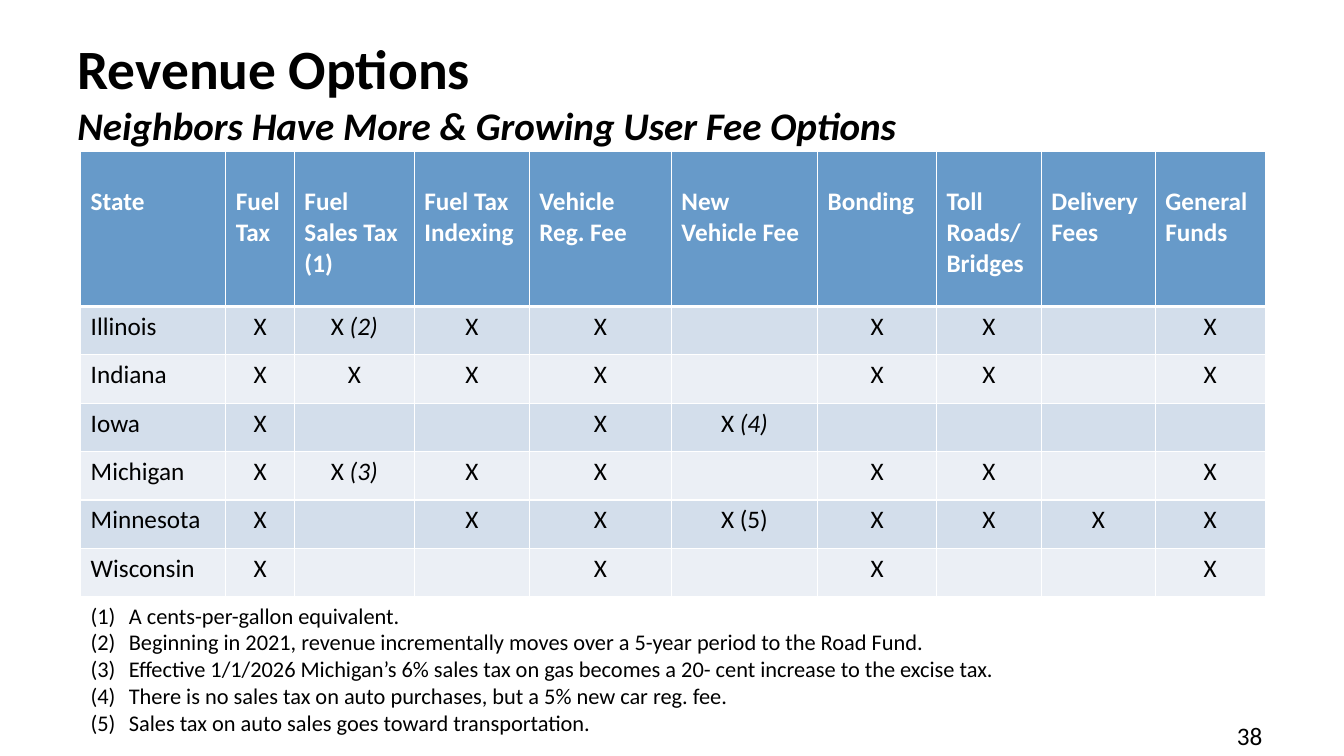
from typing import NamedTuple

from lxml import etree
from pptx import Presentation, util as u
from pptx.dml import color
from pptx.enum import text
from pptx.oxml import ns

FONT = "Calibri"
BLACK, WHITE, HEADER_BLUE = "000000", "FFFFFF", "679AC9"
BANDS = ("D3DEEB", "EBEFF5")


class Run(NamedTuple):
    text: str
    fmt: dict = {}


class Box(NamedTuple):
    left: float
    top: float
    width: float
    height: float


class Column(NamedTuple):
    title: str
    width: float


class State(NamedTuple):
    name: str
    marks: dict[int, tuple[Run, ...]]


def rgb(value: str) -> color.RGBColor:
    return color.RGBColor.from_string(value)


def add_run(p, run: Run, size: float, ink: str = BLACK) -> None:
    r = p.add_run()
    r.text = run.text
    for name, value in {"name": FONT, "size": u.Pt(size), **run.fmt}.items():
        setattr(r.font, name, value)
    r.font.color.rgb = rgb(ink)


def add_box(slide, box: Box):
    tf = slide.shapes.add_textbox(*map(u.Inches, box)).text_frame
    tf.word_wrap = True
    return tf


def set_borders(cell, widths: dict[str, float]) -> None:
    tc_pr = cell._tc.get_or_add_tcPr()
    for i, (side, width) in enumerate(widths.items()):
        ln = etree.Element(ns.qn(f"a:ln{side}"), w=str(u.Pt(width)))
        fill = etree.SubElement(ln, ns.qn("a:solidFill"))
        etree.SubElement(fill, ns.qn("a:srgbClr"), val=WHITE)
        tc_pr.insert(i, ln)


def paint_cell(cell, fill: str, top: float = 1, bottom: float = 1) -> None:
    cell.fill.solid()
    cell.fill.fore_color.rgb = rgb(fill)
    set_borders(cell, {"L": 1, "R": 1, "T": top, "B": bottom})


def number_paragraph(p) -> None:
    p_pr = p._p.get_or_add_pPr()
    p_pr.set("marL", str(u.Inches(0.38)))
    p_pr.set("indent", str(-u.Inches(0.38)))
    etree.SubElement(p_pr, ns.qn("a:buFont"), typeface=FONT)
    etree.SubElement(p_pr, ns.qn("a:buAutoNum"), type="arabicParenBoth")


X = (Run("X"),)


def noted(note: str, italic: bool = True) -> tuple[Run, ...]:
    return Run("X "), Run(note, {"italic": italic})


COLUMNS = [
    Column("State", 1.44), Column("Fuel Tax", 0.68),
    Column("Fuel Sales Tax (1)", 1.19), Column("Fuel Tax Indexing", 1.14),
    Column("Vehicle Reg. Fee", 1.41), Column("New Vehicle Fee", 1.45),
    Column("Bonding", 1.18), Column("Toll Roads/\nBridges", 1.04),
    Column("Delivery Fees", 1.13), Column("General Funds", 1.09),
]
# Marks are keyed by column number
COMMON = dict.fromkeys((1, 3, 4, 6, 7, 9), X)
STATES = [
    State("Illinois", {**COMMON, 2: noted("(2)")}),
    State("Indiana", {**COMMON, 2: X}),
    State("Iowa", {1: X, 4: X, 5: noted("(4)")}),
    State("Michigan", {**COMMON, 2: noted("(3)")}),
    State("Minnesota", {**COMMON, 5: noted("(5)", False), 8: X}),
    State("Wisconsin", dict.fromkeys((1, 4, 6, 9), X)),
]
NOTES = [
    "A cents-per-gallon equivalent.",
    "Beginning in 2021, revenue incrementally moves over a 5-year period to the Road Fund.",
    "Effective 1/1/2026 Michigan’s 6% sales tax on gas becomes a 20- cent increase to the excise tax.",
    "There is no sales tax on auto purchases, but a 5% new car reg. fee.",
    "Sales tax on auto sales goes toward transportation.",
]


def add_title(slide) -> None:
    tf = add_box(slide, Box(0.67, 0.28, 12, 1.25))
    tf.vertical_anchor = text.MSO_ANCHOR.MIDDLE
    p = tf.paragraphs[0]
    add_run(p, Run("Revenue Options", {"bold": True}), 39.6)
    p.add_line_break()
    add_run(p, Run("Neighbors Have More & Growing User Fee Options",
                   {"bold": True, "italic": True}), 27.9)


def add_revenue_table(slide) -> None:
    table = slide.shapes.add_table(
        len(STATES) + 1, len(COLUMNS),
        *map(u.Inches, Box(0.8, 1.5, 11.75, 4.42))).table

    # Header row
    table.rows[0].height = u.Inches(1.54)
    for i, column in enumerate(COLUMNS):
        table.columns[i].width = u.Inches(column.width)
        cell = table.cell(0, i)
        paint_cell(cell, HEADER_BLUE, bottom=3)
        cell.margin_top = u.Inches(0.35)
        tf = cell.text_frame
        for n, line in enumerate(column.title.split("\n")):
            p = tf.add_paragraph() if n else tf.paragraphs[0]
            add_run(p, Run(line, {"bold": True}), 18, WHITE)

    # State rows
    for row, state in enumerate(STATES, 1):
        table.rows[row].height = u.Inches(0.48)
        for i in range(len(COLUMNS)):
            cell = table.cell(row, i)
            paint_cell(cell, BANDS[(row - 1) % 2], top=3 if row == 1 else 1)
            p = cell.text_frame.paragraphs[0]
            if i:
                p.alignment = text.PP_ALIGN.CENTER
            runs = state.marks.get(i, ()) if i else (Run(state.name),)
            for run in runs:
                add_run(p, Run(run.text, {"bold": False, **run.fmt}), 18)


def add_notes(slide) -> None:
    tf = add_box(slide, Box(0.8, 5.92, 11.87, 1.45))
    for i, note in enumerate(NOTES):
        p = tf.add_paragraph() if i else tf.paragraphs[0]
        number_paragraph(p)
        add_run(p, Run(note), 16)


def main() -> None:
    prs = Presentation()
    prs.slide_width, prs.slide_height = u.Inches(13.33), u.Inches(7.5)
    slide = prs.slides.add_slide(prs.slide_layouts[6])
    add_revenue_table(slide)
    add_notes(slide)
    add_title(slide)
    # Page number
    page = add_box(slide, Box(12.17, 7.1, 1, 0.4))
    add_run(page.paragraphs[0], Run("38"), 18)
    prs.save("out.pptx")


if __name__ == "__main__":
    main()
